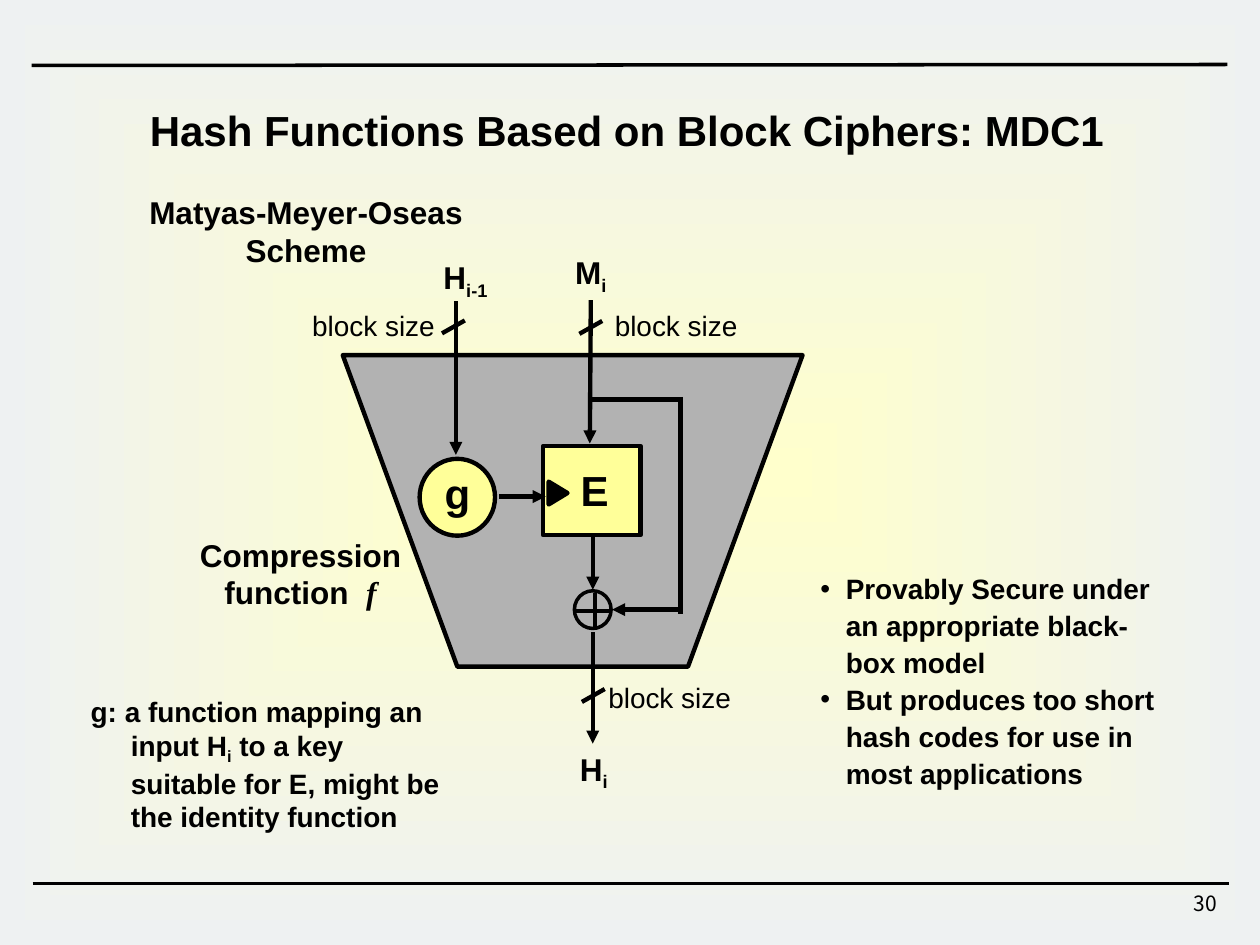
"""Build the slide on hash functions based on block ciphers."""
import dataclasses
import typing

import lxml.etree
import pptx
import pptx.dml.color
import pptx.enum.shapes
import pptx.enum.text
import pptx.oxml.ns
import pptx.util

Cm = pptx.util.Cm
Pt = pptx.util.Pt
KIND = pptx.enum.shapes.MSO_SHAPE
ALIGN = pptx.enum.text.PP_ALIGN
Box = tuple[float, float, float, float]


@dataclasses.dataclass(frozen=True)
class Theme:
    ink: str = "000000"
    glow: str = "FFFFCC"
    edge: str = "EEF1F2"
    gray: str = "B2B2B2"
    cream: str = "FFFF99"
    sans: str = "Arial"
    serif: str = "Times New Roman"
    page: str = "Noto Sans CJK KR"
    large: int = 24
    mid: int = 18
    small: int = 16
    tiny: int = 12
    thick: float = 2.5
    thin: float = 2


@dataclasses.dataclass(frozen=True)
class Label:
    box: Box
    text: str
    size: int
    bold: bool = True
    wrap: bool = False
    align: ALIGN = ALIGN.CENTER
    face: str = Theme.sans


@dataclasses.dataclass(frozen=True)
class Wire:
    ends: Box
    arrow: bool = False
    width: float = Theme.thick


@dataclasses.dataclass(frozen=True)
class Block:
    kind: KIND
    box: Box
    fill: typing.Optional[str]
    width: float = Theme.thick
    turn: float = 0


LOOK = Theme()
TITLE = Label((2.77, 1.98, 19.74, 1.27), "Hash Functions Based on Block Ciphers: MDC1", LOOK.large)
POINTS = Label(
    (16.54, 11.46, 7.14, 4.47),
    "Provably Secure under an appropriate black-box model\n"
    "But produces too short hash codes for use in most applications",
    LOOK.small, wrap=True, align=ALIGN.LEFT,
)
NOTE = Label(
    (1.83, 14, 7.14, 2.72),
    "g: a function mapping an input H_i_ to a key suitable for E, might be the identity function",
    LOOK.small, wrap=True, align=ALIGN.LEFT,
)
PRESS = Label((3.94, 10.8, 4.24, 1.52), "Compression\nfunction  ", LOOK.mid)
LABELS = [
    Label((19.51, 17.95, 5.03, 0.6), "30", LOOK.tiny, False, True, ALIGN.RIGHT, LOOK.page),
    Label((2.87, 3.89, 6.6, 1.52), "Matyas-Meyer-Oseas Scheme", LOOK.mid, wrap=True),
    Label((11.71, 9.37, 0.56, 1.02), "E", LOOK.large),
    Label((8.97, 9.42, 0.51, 1.02), "g", LOOK.large),
    Label((11.68, 15.11, 0.58, 0.76), "H_i", LOOK.mid),
    Label((11.58, 5.11, 0.66, 0.76), "M_i", LOOK.mid),
    Label((8.71, 5.21, 1.35, 0.76), "H_i-1", LOOK.mid),
]
SIZES = [(6.3, 6.22), (12.4, 6.22), (12.27, 13.72)]
TICKS = [(9.14, 6.59), (11.91, 6.6), (11.96, 14.02)]
FRAME = [(6.91, 7.16), (9.22, 13.44), (13.87, 13.44), (16.18, 7.16)]
BLOCKS = [
    Block(KIND.RECTANGLE, (10.95, 8.99, 1.96, 1.8), LOOK.cream),
    Block(KIND.OVAL, (11.58, 11.91, 0.74, 0.76), None, LOOK.thin),
    Block(KIND.OVAL, (8.46, 9.25, 1.52, 1.55), LOOK.cream),
    Block(KIND.ISOSCELES_TRIANGLE, (11.02, 9.75, 0.46, 0.38), LOOK.ink, turn=90),
]
WIRES = [
    Wire((0.64, 1.32, 24.74, 1.3), width=LOOK.thin),
    Wire((0.66, 17.81, 24.77, 17.81), width=LOOK.thin),
    Wire((11.58, 12.32, 12.32, 12.32), width=LOOK.thin),
    Wire((11.99, 11.96, 11.99, 12.7), width=LOOK.thin),
    Wire((11.95, 10.82, 11.95, 11.89), True),
    Wire((11.95, 12.75, 11.95, 14.99), True),
    Wire((11.91, 6.05, 11.89, 8.94), True),
    Wire((9.19, 6.07, 9.19, 9.17), True),
    Wire((10.06, 10.01, 11, 10.01), True),
    Wire((11.91, 8.05, 13.72, 8.05)),
    Wire((13.72, 8, 13.72, 12.37)),
    Wire((13.72, 12.29, 12.34, 12.29), True),
]


def lengths(box: Box) -> list[pptx.util.Length]:
    return [Cm(v) for v in box]


def tint(code: str) -> pptx.dml.color.RGBColor:
    return pptx.dml.color.RGBColor.from_string(code)


def child(node, tag: str, **attrs: str):
    return lxml.etree.SubElement(node, pptx.oxml.ns.qn(tag), attrs)


def write(shape, label: Label):
    """Fill a shape with the label, taking text between underscores as subscript."""
    shape.left, shape.top, shape.width, shape.height = lengths(label.box)
    frame = shape.text_frame
    frame.word_wrap = label.wrap
    frame.auto_size = pptx.enum.text.MSO_AUTO_SIZE.NONE
    frame.margin_left = frame.margin_right = frame.margin_top = frame.margin_bottom = 0
    for n, line in enumerate(label.text.split("\n")):
        para = frame.paragraphs[0] if n == 0 else frame.add_paragraph()
        para.alignment = label.align
        para.space_before = Pt(0)
        font = para.font
        font.name, font.size, font.bold = label.face, Pt(label.size), label.bold
        font.color.rgb = tint(LOOK.ink)
        for k, part in enumerate(line.split("_")):
            run = para.add_run()
            run.text = part
            if k % 2:
                run._r.get_or_add_rPr().set("baseline", "-25000")
    return frame


def indent(para, size: float) -> None:
    props = para._p.get_or_add_pPr()
    props.set("marL", str(Cm(size)))
    props.set("indent", str(-Cm(size)))


def style(shape, fill: typing.Optional[str], width: float) -> None:
    shape.shadow.inherit = False
    if fill:
        shape.fill.solid()
        shape.fill.fore_color.rgb = tint(fill)
    else:
        shape.fill.background()
    shape.line.color.rgb = tint(LOOK.ink)
    shape.line.width = Pt(width)


def draw_wire(shapes, wire: Wire) -> None:
    line = shapes.add_connector(pptx.enum.shapes.MSO_CONNECTOR.STRAIGHT, *lengths(wire.ends))
    line.line.color.rgb = tint(LOOK.ink)
    line.line.width = Pt(wire.width)
    if wire.arrow:
        child(line.line._get_or_add_ln(), "a:tailEnd", type="triangle")
    child(line._element.spPr, "a:effectLst")


def draw_block(shapes, block: Block) -> None:
    shape = shapes.add_shape(block.kind, *lengths(block.box))
    shape.rotation = block.turn
    style(shape, block.fill, block.width)


def draw_ground(shapes, width: int, height: int) -> None:
    ground = shapes.add_shape(KIND.RECTANGLE, 0, 0, width, height)
    ground.shadow.inherit = False
    ground.line.fill.background()
    ground.fill.gradient()
    for stop, code, place in zip(ground.fill.gradient_stops, (LOOK.glow, LOOK.edge), (0, 1)):
        stop.color.rgb = tint(code)
        stop.position = place
    grad = ground._element.spPr.find(pptx.oxml.ns.qn("a:gradFill"))
    grad.remove(grad.find(pptx.oxml.ns.qn("a:lin")))
    sides = dict.fromkeys("ltrb", "50000")
    child(child(grad, "a:path", path="shape"), "a:fillToRect", **sides)
    shapes._spTree.insert(2, ground._element)


def main() -> None:
    deck = pptx.Presentation()
    deck.slide_width, deck.slide_height = Cm(25.4), Cm(19.05)
    slide = deck.slides.add_slide(deck.slide_layouts[1])
    shapes = slide.shapes
    draw_ground(shapes, deck.slide_width, deck.slide_height)
    write(shapes.title, TITLE)
    for para in write(slide.placeholders[1], POINTS).paragraphs:
        para.line_spacing = 1.1
        indent(para, 0.51)

    start, *rest = [(Cm(x), Cm(y)) for x, y in FRAME]
    form = shapes.build_freeform(*start)
    form.add_line_segments(rest)
    style(form.convert_to_shape(), LOOK.gray, LOOK.thick)
    for block in BLOCKS:
        draw_block(shapes, block)
    ticks = [Wire((x + 0.23, y - 0.13, x - 0.23, y + 0.13)) for x, y in TICKS]
    for wire in WIRES + ticks:
        draw_wire(shapes, wire)

    sizes = [Label((x, y, 2.46, 0.69), "block size", LOOK.small, False) for x, y in SIZES]
    for label in LABELS + sizes:
        write(shapes.add_textbox(0, 0, 0, 0), label)
    note = write(shapes.add_textbox(0, 0, 0, 0), NOTE)
    indent(note.paragraphs[0], 0.81)
    press = write(shapes.add_textbox(0, 0, 0, 0), PRESS)
    sign = press.paragraphs[-1].add_run()
    sign.text = "f"
    sign.font.name, sign.font.italic = LOOK.serif, True
    deck.save("out.pptx")


if __name__ == "__main__":
    main()
